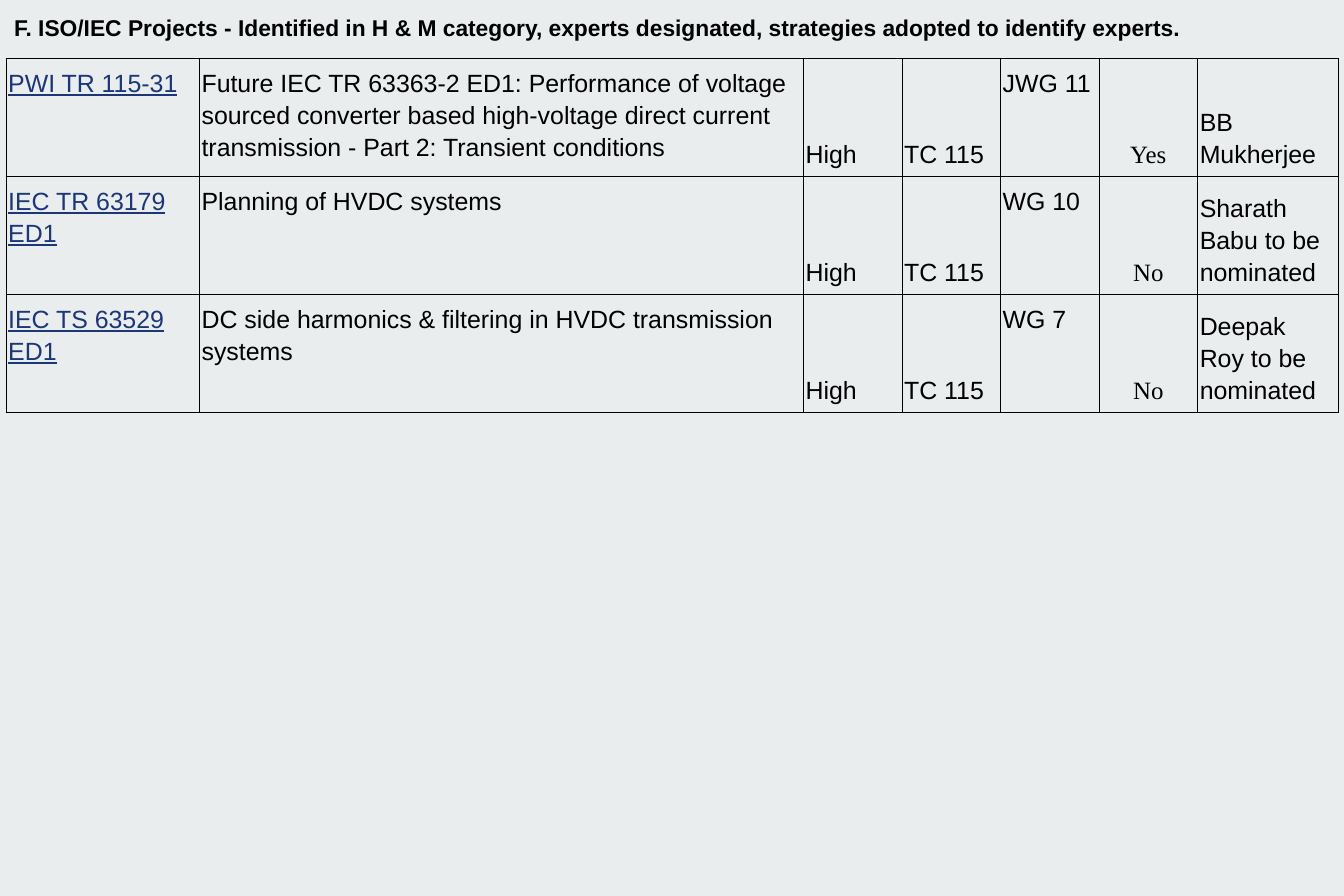
import pptx
import pptx.dml.color
import pptx.enum.text
import pptx.oxml
import pptx.oxml.ns
import pptx.util
from dataclasses import dataclass

Inches = pptx.util.Inches
Pt = pptx.util.Pt
Anchor = pptx.enum.text.MSO_ANCHOR
Align = pptx.enum.text.PP_ALIGN


@dataclass(frozen=True)
class Theme:
    background: str = "E9EDEE"
    ink: str = "000000"
    link: str = "1C3678"
    sans: str = "Arial"
    serif: str = "Times New Roman"
    title_size: int = 22
    body_size: int = 24
    border_width: float = 0.67


THEME = Theme()
TITLE = ("F. ISO/IEC Projects - Identified in H & M category, experts designated, "
         "strategies adopted to identify experts.")
COLUMNS = [
    {"width": 2.59, "color": THEME.link, "underline": True},
    {"width": 8.09},
    {"width": 1.32, "anchor": Anchor.BOTTOM},
    {"width": 1.32, "anchor": Anchor.BOTTOM},
    {"width": 1.32},
    {"width": 1.32, "anchor": Anchor.BOTTOM, "align": Align.CENTER, "font": THEME.serif},
    {"width": 1.89, "anchor": Anchor.BOTTOM},
]
ROW_HEIGHT = 1.48
PROJECTS = [
    ["PWI TR 115-31",
     "Future IEC TR 63363-2 ED1: Performance of voltage sourced converter based "
     "high-voltage direct current transmission - Part 2: Transient conditions",
     "High", "TC 115", "JWG 11", "Yes", "BB Mukherjee"],
    ["IEC TR 63179 ED1", "Planning of HVDC systems",
     "High", "TC 115", "WG 10", "No", "Sharath Babu to be nominated"],
    ["IEC TS 63529 ED1", "DC side harmonics & filtering in HVDC transmission systems",
     "High", "TC 115", "WG 7", "No", "Deepak Roy to be nominated"],
]


def apply(target, values):
    for name, value in values.items():
        setattr(target, name, value)


def margins(horizontal, vertical):
    return {"margin_left": Inches(horizontal), "margin_right": Inches(horizontal),
            "margin_top": Inches(vertical), "margin_bottom": Inches(vertical)}


def write_text(para, text, size, color=THEME.ink, font=THEME.sans, bold=False, underline=False):
    span = para.add_run()
    span.text = text
    apply(span.font, {"name": font, "size": Pt(size), "bold": bold, "underline": underline})
    span.font.color.rgb = pptx.dml.color.RGBColor.from_string(color)


def add_title(page):
    box = page.shapes.add_textbox(0, 0, Inches(18), Inches(1.25))
    apply(box.text_frame, {"word_wrap": True, "vertical_anchor": Anchor.TOP,
                           **margins(0.19, 0.19)})
    write_text(box.text_frame.paragraphs[0], TITLE, THEME.title_size, bold=True)


def add_borders(cell):
    properties = cell._tc.get_or_add_tcPr()
    for position, side in enumerate(("lnL", "lnR", "lnT", "lnB")):
        border = pptx.oxml.parse_xml(
            f'<a:{side} {pptx.oxml.ns.nsdecls("a")} w="{Pt(THEME.border_width)}">'
            f'<a:solidFill><a:srgbClr val="{THEME.ink}"/></a:solidFill></a:{side}>')
        properties.insert(position, border)


def fill_cell(cell, text, column):
    apply(cell, {"vertical_anchor": column.get("anchor", Anchor.TOP), **margins(0.03, 0.1)})
    cell.fill.background()
    add_borders(cell)
    para = cell.text_frame.paragraphs[0]
    apply(para, {"line_spacing": 1.15, "alignment": column.get("align", Align.LEFT)})
    write_text(para, text, THEME.body_size, color=column.get("color", THEME.ink),
               font=column.get("font", THEME.sans), underline=column.get("underline", False))


def add_projects(page):
    width = sum(column["width"] for column in COLUMNS)
    table = page.shapes.add_table(len(PROJECTS), len(COLUMNS), Inches(0.08), Inches(0.78),
                                  Inches(width), Inches(ROW_HEIGHT * len(PROJECTS))).table
    apply(table, {"first_row": False, "horz_banding": False})
    for index, column in enumerate(COLUMNS):
        table.columns[index].width = Inches(column["width"])
        for row, project in enumerate(PROJECTS):
            fill_cell(table.cell(row, index), project[index], column)


def main():
    deck = pptx.Presentation()
    apply(deck, {"slide_width": Inches(18), "slide_height": Inches(12)})
    page = deck.slides.add_slide(deck.slide_layouts[6])
    page.background.fill.solid()
    page.background.fill.fore_color.rgb = pptx.dml.color.RGBColor.from_string(THEME.background)
    add_title(page)
    add_projects(page)
    deck.save("out.pptx")


if __name__ == "__main__":
    main()
